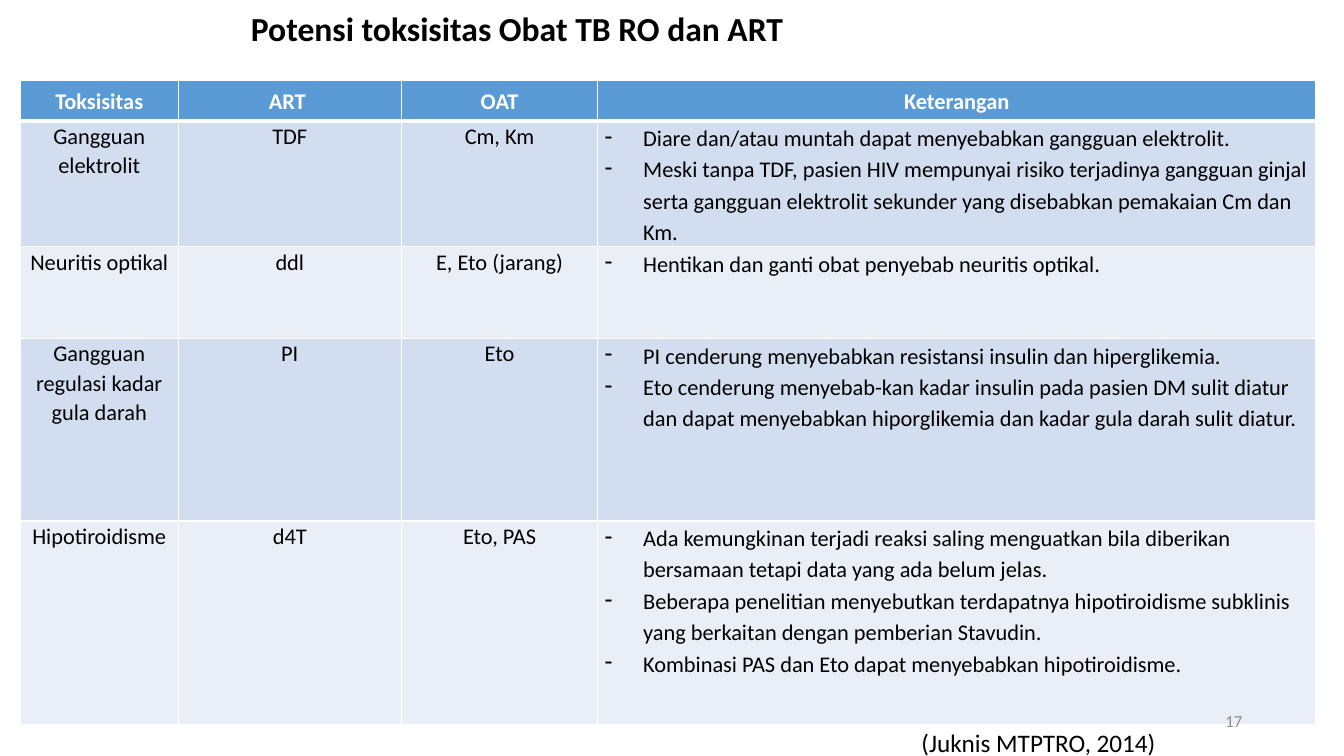
"""Build the slide on overlapping toxicity of TB RO drugs and ART."""
from itertools import product

from lxml.etree import SubElement
from pptx import Presentation
from pptx.dml.color import RGBColor as Color
from pptx.enum.text import MSO_ANCHOR as Anchor, PP_ALIGN as Align
from pptx.oxml.ns import qn
from pptx.util import Inches, Pt

THEME = {
    "font": "Calibri",
    "black": Color.from_string("000000"),
    "white": Color.from_string("FFFFFF"),
    "grey": Color.from_string("8C8C8C"),
    "header": Color.from_string("5B9BD5"),
    "bands": [Color.from_string("EAEFF7"), Color.from_string("D2DEEF")],
    "title_size": 24,
    "table_size": 16,
    "source_size": 18,
    "number_size": 12,
}
COLUMNS = [1.57, 2.21, 1.95, 7.12]
ROWS = [0.4, 1.23, 0.91, 1.81, 2.02]
TABLE_LEFT, TABLE_TOP = 0.2, 0.8
HANGING = Inches(0.38)
CONTENT = [
    ("Toksisitas", "ART ", "OAT", "Keterangan"),
    ("Gangguan elektrolit", "TDF", "Cm, Km", [
        "Diare dan/atau muntah dapat menyebabkan gangguan elektrolit.",
        "Meski tanpa TDF, pasien HIV mempunyai risiko terjadinya gangguan ginjal serta "
        "gangguan elektrolit sekunder yang disebabkan pemakaian Cm dan Km.",
    ]),
    ("Neuritis optikal", "ddl", "E, Eto (jarang)", [
        "Hentikan dan ganti obat penyebab neuritis optikal.",
    ]),
    ("Gangguan regulasi kadar gula darah", "PI", "Eto", [
        "PI cenderung menyebabkan resistansi insulin dan hiperglikemia.",
        "Eto cenderung menyebab-kan kadar insulin pada pasien DM sulit diatur dan dapat "
        "menyebabkan hiporglikemia dan kadar gula darah sulit diatur.",
    ]),
    ("Hipotiroidisme", "d4T", "Eto, PAS", [
        "Ada kemungkinan terjadi reaksi saling menguatkan bila diberikan bersamaan "
        "tetapi data yang ada belum jelas.",
        "Beberapa penelitian menyebutkan terdapatnya hipotiroidisme subklinis yang "
        "berkaitan dengan pemberian Stavudin.",
        "Kombinasi PAS dan Eto dapat menyebabkan hipotiroidisme.",
    ]),
]


def write(frame, text, size, color=THEME["black"], bold=False, align=Align.LEFT, spacing=1.0):
    """Write a string as plain text, or a list of strings as dashed items."""
    items = text if isinstance(text, list) else [text]
    for index, item in enumerate(items):
        paragraph = frame.add_paragraph() if index else frame.paragraphs[0]
        paragraph.alignment = align
        paragraph.line_spacing = spacing
        if isinstance(text, list):
            properties = paragraph._p.get_or_add_pPr()
            properties.set("marL", str(HANGING))
            properties.set("indent", str(-HANGING))
            SubElement(properties, qn("a:buChar"), char="-")
            tabs = SubElement(properties, qn("a:tabLst"))
            SubElement(tabs, qn("a:tab"), pos=str(Inches(0.21)), algn="l")
        run = paragraph.add_run()
        run.text = item
        run.font.name = THEME["font"]
        run.font.size = Pt(size)
        run.font.bold = bold
        run.font.color.rgb = color


presentation = Presentation()
presentation.slide_width = Inches(13.33)
presentation.slide_height = Inches(7.5)
slide = presentation.slides.add_slide(presentation.slide_layouts[6])

table = slide.shapes.add_table(
    len(ROWS), len(COLUMNS), Inches(TABLE_LEFT), Inches(TABLE_TOP),
    Inches(sum(COLUMNS)), Inches(sum(ROWS)),
).table
for column, width in zip(table.columns, COLUMNS):
    column.width = Inches(width)
for row, height in zip(table.rows, ROWS):
    row.height = Inches(height)

for row, column in product(range(len(ROWS)), range(len(COLUMNS))):
    cell = table.cell(row, column)
    text = CONTENT[row][column]
    is_header = row == 0
    cell.margin_left = cell.margin_right = Inches(0.07)
    cell.margin_top = cell.margin_bottom = 0
    cell.vertical_anchor = Anchor.MIDDLE if is_header else Anchor.TOP
    for side in "LRTB":
        heavy = (row, side) in [(0, "B"), (1, "T")]
        border = SubElement(cell._tc.get_or_add_tcPr(), qn(f"a:ln{side}"), w=str(Pt(3 if heavy else 1)))
        SubElement(SubElement(border, qn("a:solidFill")), qn("a:srgbClr"), val=str(THEME["white"]))
    cell.fill.solid()
    cell.fill.fore_color.rgb = THEME["header"] if is_header else THEME["bands"][row % 2]
    is_list = isinstance(text, list)
    write(
        cell.text_frame, text, THEME["table_size"], bold=is_header,
        color=THEME["white"] if is_header else THEME["black"],
        align=Align.LEFT if is_list else Align.CENTER,
        spacing=1.15 if is_list else 1.07,
    )

table_bottom = TABLE_TOP + sum(ROWS)
for text, box, anchor, style in [
    ("Potensi toksisitas Obat TB RO dan ART", (2.39, 0.03, 8.26, 1.31), Anchor.TOP,
     {"size": THEME["title_size"], "bold": True}),
    ("17", (9.42, 6.95, 3, 0.4), Anchor.MIDDLE,
     {"size": THEME["number_size"], "color": THEME["grey"], "align": Align.RIGHT}),
    ("(Juknis MTPTRO, 2014)", (9.04, table_bottom, 2.62, 0.4), Anchor.TOP,
     {"size": THEME["source_size"]}),
]:
    frame = slide.shapes.add_textbox(*map(Inches, box)).text_frame
    frame.word_wrap = True
    frame.vertical_anchor = anchor
    write(frame, text, **style)

presentation.save("out.pptx")
